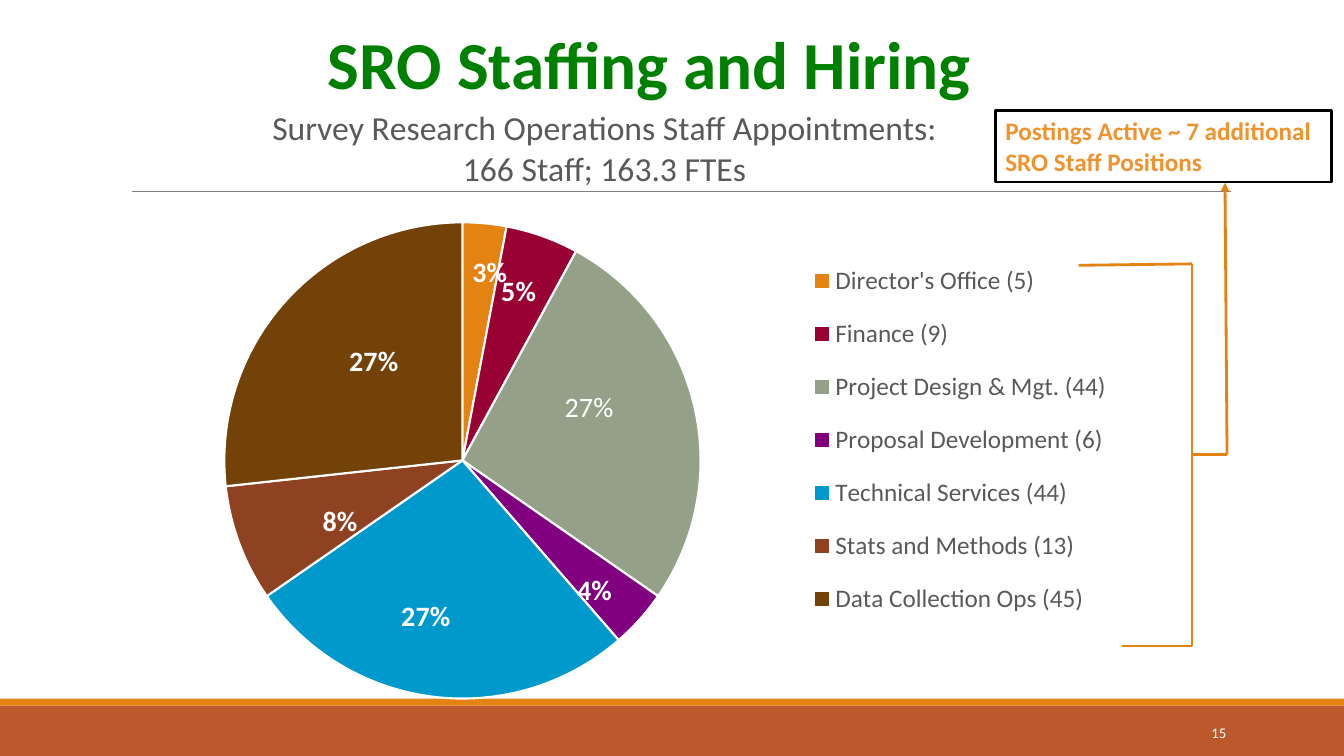
from lxml.etree import SubElement
from pptx import Presentation
from pptx.chart.data import CategoryChartData
from pptx.dml.color import RGBColor
from pptx.enum.chart import XL_CHART_TYPE, XL_LABEL_POSITION, XL_LEGEND_POSITION
from pptx.enum.shapes import MSO_CONNECTOR, MSO_SHAPE
from pptx.enum.text import MSO_ANCHOR, PP_ALIGN
from pptx.oxml import parse_xml
from pptx.oxml.ns import nsdecls, qn
from pptx.util import Pt

# Colours
WHITE = RGBColor(0xFF, 0xFF, 0xFF)
BLACK = RGBColor(0, 0, 0)
GREEN = RGBColor(0, 0x80, 0)
GRAY = RGBColor(0x80, 0x80, 0x80)
TEXT = RGBColor(0x59, 0x59, 0x59)
ORANGE = RGBColor(0xE4, 0x83, 0x12)
RUST = RGBColor(0xBD, 0x58, 0x2C)
NOTE = RGBColor(0xEE, 0x93, 0x2E)
FONT = "Calibri"

# Content
TITLE = "SRO Staffing and Hiring"
SUBTITLE = ["Survey Research Operations Staff Appointments:", "166 Staff; 163.3 FTEs"]
POSTINGS = "Postings Active ~ 7 additional SRO Staff Positions"
PAGE = "15"
# name, percent, colour, bold label, label shift from slice centre (share of chart)
STAFF = [
    ("Director's Office (5)", 3, ORANGE, True, (0.015, -0.11)),
    ("Finance (9)", 5, RGBColor(0x99, 0, 0x33), True, (0.015, -0.09)),
    ("Project Design & Mgt. (44)", 27, RGBColor(0x94, 0xA0, 0x88), False, (0.01, -0.04)),
    ("Proposal Development (6)", 4, RGBColor(0x80, 0, 0x80), True, (0.04, 0.08)),
    ("Technical Services (44)", 27, RGBColor(0, 0x99, 0xCC), True, (-0.02, 0.06)),
    ("Stats and Methods (13)", 8, RGBColor(0x8E, 0x42, 0x21), True, (-0.01, 0.03)),
    ("Data Collection Ops (45)", 27, RGBColor(0x72, 0x42, 0x09), True, (0, -0.03)),
]

# Geometry in points
W, H = 960, 540
BAR_Y, BAR_H, STRIPE_H = 504, 36, 5
BRACKET_X, BRACKET_TOP, BRACKET_END = 851.5, 188.5, 461.5
BRANCH_X, BRANCH_Y, BOX_BOTTOM = 876.5, 324.5, 130.5
BRACKET = [
    (770.5, 189.5, BRACKET_X, BRACKET_TOP),
    (BRACKET_X, BRACKET_TOP, BRACKET_X, BRACKET_END),
    (BRACKET_X, BRACKET_END, 801.5, BRACKET_END),
    (BRACKET_X, BRANCH_Y, BRANCH_X, BRANCH_Y),
    (BRANCH_X, BRANCH_Y, 875, BOX_BOTTOM),
]


def set_font(font, size, color, bold=False):
    font.name, font.size, font.bold = FONT, Pt(size), bold
    font.color.rgb = color


def write(tf, text, size=18, color=TEXT, bold=False, align=PP_ALIGN.LEFT,
          anchor=MSO_ANCHOR.TOP):
    tf.word_wrap = True
    tf.vertical_anchor = anchor
    p = tf.paragraphs[0]
    p.alignment = align
    r = p.add_run()
    r.text = text
    set_font(r.font, size, color, bold)


def rect(s, x, y, w, h, fill=None, line=None):
    sp = s.shapes.add_shape(MSO_SHAPE.RECTANGLE, Pt(x), Pt(y), Pt(w), Pt(h))
    sp.shadow.inherit = False
    if fill is None:
        sp.fill.background()
    else:
        sp.fill.solid()
        sp.fill.fore_color.rgb = fill
    if line is None:
        sp.line.fill.background()
    else:
        sp.line.color.rgb = line
        sp.line.width = Pt(2)
    return sp


def connect(s, x1, y1, x2, y2, color=ORANGE, width=2):
    c = s.shapes.add_connector(MSO_CONNECTOR.STRAIGHT, Pt(x1), Pt(y1), Pt(x2), Pt(y2))
    c.line.color.rgb = color
    c.line.width = Pt(width)
    SubElement(c._element.spPr, qn("a:effectLst"))
    return c


def layout(target=None, before=None, **values):
    """Manual chart layout; placed before the named child of the target."""
    inner = "".join(f'<c:{k} val="{v}"/>' for k, v in values.items())
    el = parse_xml(f'<c:layout {nsdecls("c")}><c:manualLayout>{inner}'
                   "</c:manualLayout></c:layout>")
    for old in target.findall(qn("c:layout")):
        target.remove(old)
    target.find(qn(before)).addprevious(el)


def add_pie(s):
    data = CategoryChartData()
    data.categories = [row[0] for row in STAFF]
    data.add_series("Series 1", [row[1] for row in STAFF])
    chart = s.shapes.add_chart(XL_CHART_TYPE.PIE, Pt(83.5), Pt(56), Pt(777.5), Pt(453),
                               data).chart
    set_font(chart.font, 10, BLACK)
    # Chart title
    tf = chart.chart_title.text_frame
    tf.text = "\n".join(SUBTITLE)
    for p in tf.paragraphs:
        p.alignment = PP_ALIGN.CENTER
        for r in p.runs:
            set_font(r.font, 24, TEXT)
    chart.chart_title.include_in_layout = False
    layout(chart._chartSpace.chart.find(qn("c:title")), "c:overlay",
           xMode="edge", yMode="edge", x=0.14, y=0.04)
    # Legend
    chart.has_legend = True
    legend = chart.legend
    legend.position = XL_LEGEND_POSITION.RIGHT
    legend.include_in_layout = False
    set_font(legend.font, 18, TEXT)
    layout(legend._element, "c:overlay", xMode="edge", yMode="edge",
           x=0.63, y=0.26, w=0.29, h=0.62)
    # Plot, slices and labels
    layout(chart._chartSpace.chart.plotArea, "c:pieChart", layoutTarget="inner",
           xMode="edge", yMode="edge", x=0.04, y=0.227, w=0.555, h=0.751)
    plot = chart.plots[0]
    plot.vary_by_categories = True
    plot.has_data_labels = True
    labels = plot.series[0].data_labels
    labels.show_percentage, labels.show_value = True, False
    labels.number_format, labels.number_format_is_linked = "0%", False
    labels.position = XL_LABEL_POSITION.CENTER
    set_font(labels.font, 20, WHITE, True)
    for i, (_, _, color, bold, (dx, dy)) in enumerate(STAFF):
        point = plot.series[0].points[i]
        point.format.fill.solid()
        point.format.fill.fore_color.rgb = color
        point.format.line.color.rgb = WHITE
        point.format.line.width = Pt(1.5)
        label = point.data_label
        set_font(label.font, 20, WHITE, bold)
        label.position = XL_LABEL_POSITION.CENTER
        el = labels._element.findall(qn("c:dLbl"))[i]
        el.find(qn("c:showVal")).set("val", "0")
        el.find(qn("c:showPercent")).set("val", "1")
        layout(el, "c:spPr" if el.find(qn("c:spPr")) is not None else "c:txPr", x=dx, y=dy)


def main():
    prs = Presentation()
    prs.slide_width, prs.slide_height = Pt(W), Pt(H)
    s = prs.slides.add_slide(prs.slide_layouts[5])

    # Rule, footer bars and page number
    connect(s, 94.5, 136.5, 879, 136.5, GRAY, 0.5)
    rect(s, 0, BAR_Y, W, BAR_H, RUST)
    rect(s, 0, BAR_Y - STRIPE_H, W, STRIPE_H, ORANGE)
    tb = s.shapes.add_textbox(Pt(780), Pt(508.5), Pt(103), Pt(29))
    write(tb.text_frame, PAGE, size=10.5, color=WHITE, align=PP_ALIGN.RIGHT,
          anchor=MSO_ANCHOR.MIDDLE)

    # Title
    title = s.shapes.title
    title.left, title.top, title.width, title.height = Pt(34), Pt(20), Pt(860), Pt(49)
    write(title.text_frame, TITLE, size=48, color=GREEN, bold=True,
          align=PP_ALIGN.CENTER, anchor=MSO_ANCHOR.MIDDLE)

    add_pie(s)

    # Postings box with its bracket and arrow
    box = rect(s, 711, 79, 240, 51, line=BLACK)
    write(box.text_frame, POSTINGS, color=NOTE, bold=True)
    for ends in BRACKET:
        c = connect(s, *ends)
    SubElement(c.line._get_or_add_ln(), qn("a:tailEnd"), type="triangle")

    prs.save("out.pptx")


if __name__ == "__main__":
    main()
